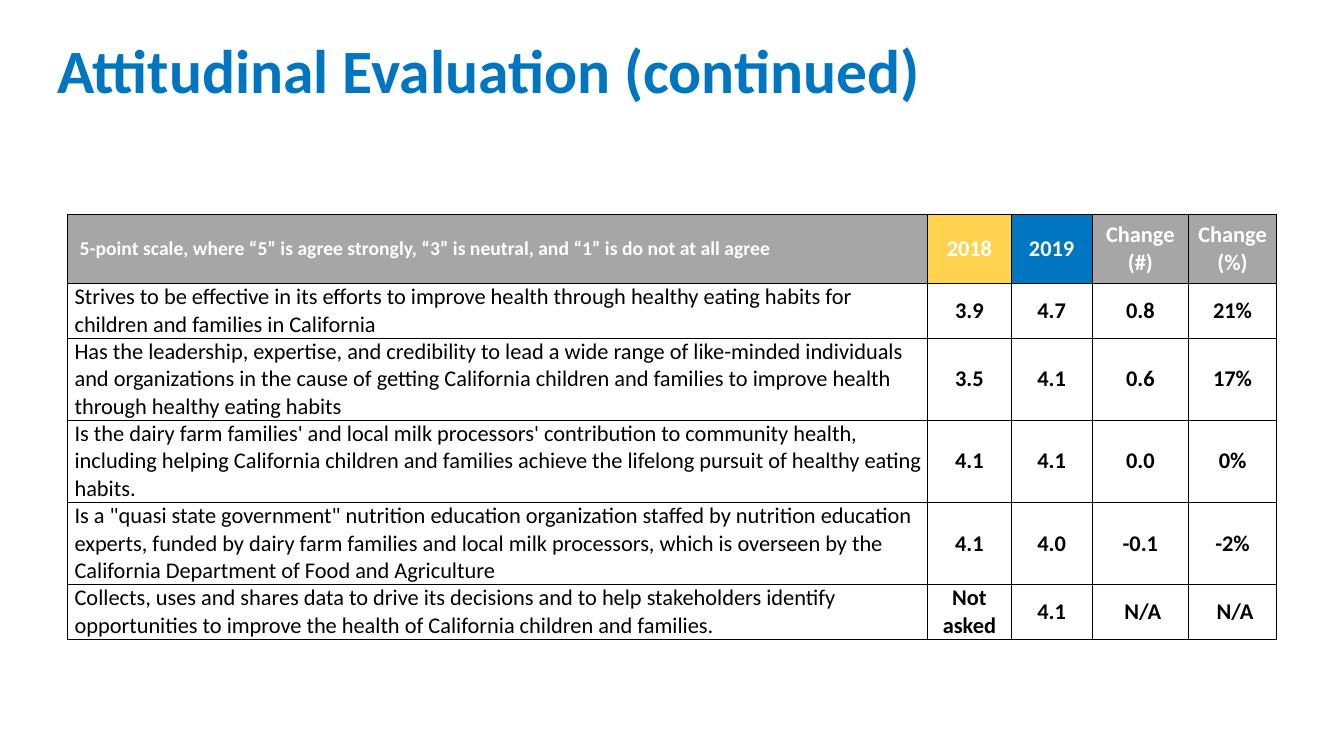
from dataclasses import dataclass
from lxml.etree import fromstring
from pptx import Presentation
from pptx.dml.color import RGBColor as RGB
from pptx.enum.text import MSO_ANCHOR as Anchor, PP_ALIGN as Align
from pptx.util import Inches, Pt


@dataclass
class Theme:
    font: str = "Calibri"
    blue: str = "0076C0"
    gold: str = "FFD24F"
    gray: str = "A6A6A6"
    white: str = "FFFFFF"
    black: str = "000000"
    title: int = 44
    body: int = 16
    note: int = 14
    rule: float = 0.5


theme = Theme()


def style(frame, size, color, bold, align):
    frame.word_wrap = True
    frame.vertical_anchor = Anchor.MIDDLE
    for para in frame.paragraphs:
        para.alignment = align
        for run in para.runs:
            font = run.font
            font.name, font.size, font.bold = theme.font, Pt(size), bold
            font.color.rgb = RGB.from_string(color)


def border(cell):
    props = cell._tc.get_or_add_tcPr()
    for spot, side in enumerate("LRTB"):
        props.insert(spot, fromstring(
            f'<a:ln{side} xmlns:a="http://schemas.openxmlformats.org/drawingml/2006/main" '
            f'w="{Pt(theme.rule)}"><a:solidFill><a:srgbClr val="{theme.black}"/>'
            f'</a:solidFill></a:ln{side}>'))


deck = Presentation()
deck.slide_width, deck.slide_height = Inches(13.33), Inches(7.5)
slide = deck.slides.add_slide(deck.slide_layouts[5])

title = slide.shapes.title
title.left, title.top = Inches(0.47), 0
title.width, title.height = Inches(11.5), Inches(1.45)
title.text_frame.text = "Attitudinal Evaluation (continued)"
title.text_frame.paragraphs[0].line_spacing = 0.9
style(title.text_frame, theme.title, theme.blue, True, Align.LEFT)

rows = [
    ("5-point scale, where “5” is agree strongly, “3” is neutral, and “1” is do not at all agree",
     "2018", "2019", "Change (#)", "Change (%)"),
    ("Strives to be effective in its efforts to improve health through healthy eating habits for "
     "children and families in California", "3.9", "4.7", "0.8", "21%"),
    ("Has the leadership, expertise, and credibility to lead a wide range of like-minded individuals "
     "and organizations in the cause of getting California children and families to improve health "
     "through healthy eating habits", "3.5", "4.1", "0.6", "17%"),
    ("Is the dairy farm families' and local milk processors' contribution to community health, "
     "including helping California children and families achieve the lifelong pursuit of healthy "
     "eating habits.", "4.1", "4.1", "0.0", "0%"),
    ('Is a "quasi state government" nutrition education organization staffed by nutrition education '
     "experts, funded by dairy farm families and local milk processors, which is overseen by the "
     "California Department of Food and Agriculture", "4.1", "4.0", "-0.1", "-2%"),
    ("Collects, uses and shares data to drive its decisions and to help stakeholders identify "
     "opportunities to improve the health of California children and families.",
     "Not asked", "4.1", " N/A", " N/A"),
]
widths = [8.53, 0.83, 0.8, 0.96, 0.87]
heights = [0.68, 0.54, 0.81, 0.81, 0.81, 0.54]
fills = [theme.gray, theme.gold, theme.blue, theme.gray, theme.gray]

grid = slide.shapes.add_table(len(rows), len(widths), Inches(0.67), Inches(2.13),
                              Inches(sum(widths)), Inches(sum(heights))).table
grid.first_row = grid.horz_banding = False
for col, width in zip(grid.columns, widths):
    col.width = Inches(width)

for r, texts in enumerate(rows):
    grid.rows[r].height = Inches(heights[r])
    head = r == 0
    for c, text in enumerate(texts):
        cell = grid.cell(r, c)
        label = c == 0
        cell.margin_left = cell.margin_right = cell.margin_top = cell.margin_bottom = 0
        if label:
            cell.margin_left = Inches(0.12 if head else 0.07)
        cell.vertical_anchor = Anchor.MIDDLE
        cell.text_frame.text = text
        style(cell.text_frame, theme.note if head and label else theme.body,
              theme.white if head else theme.black, head or not label,
              Align.LEFT if label else Align.CENTER)
        if head:
            cell.fill.solid()
            cell.fill.fore_color.rgb = RGB.from_string(fills[c])
        else:
            cell.fill.background()
        border(cell)

deck.save("out.pptx")
